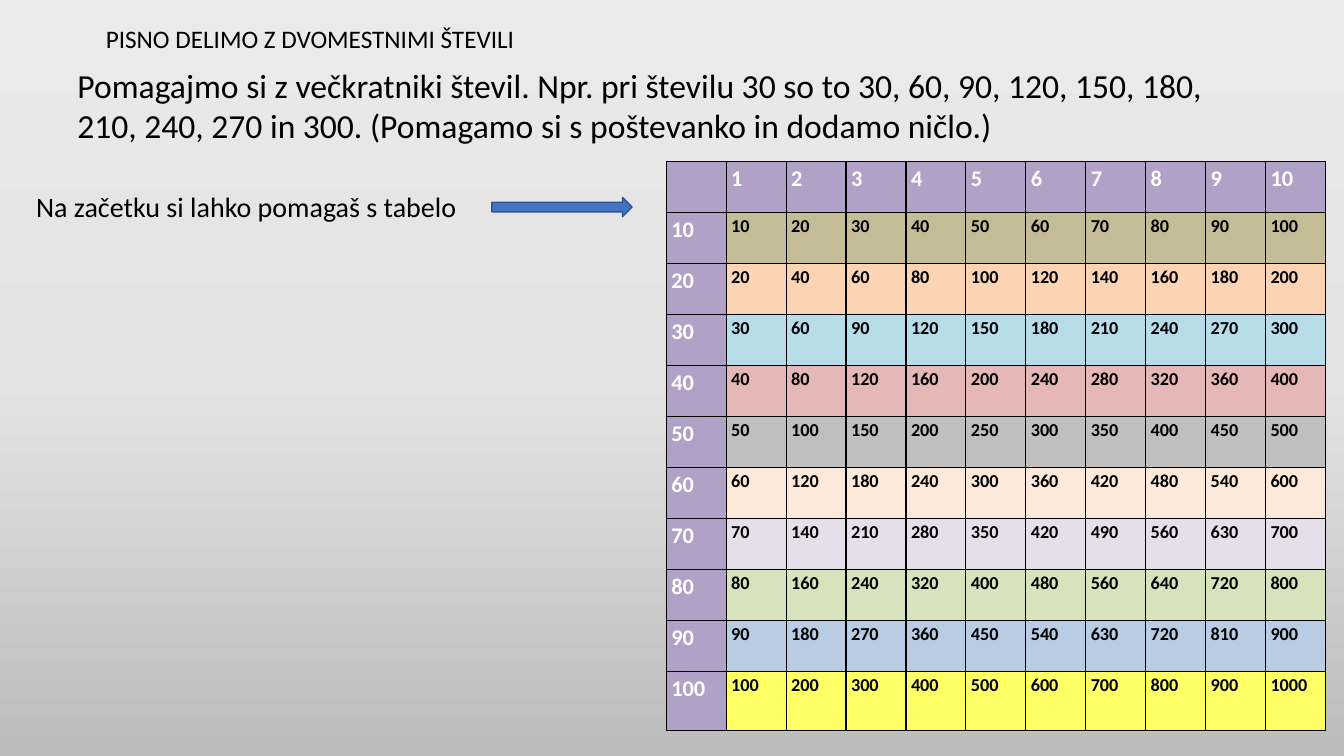
from typing import NamedTuple

from lxml import etree
from pptx import Presentation
from pptx.dml.color import RGBColor
from pptx.enum.shapes import MSO_SHAPE
from pptx.enum.text import MSO_ANCHOR, MSO_AUTO_SIZE, PP_ALIGN
from pptx.oxml import parse_xml
from pptx.oxml.ns import nsdecls, qn
from pptx.util import Inches, Pt

RIGHT_ARROW = MSO_SHAPE.RIGHT_ARROW
TOP = MSO_ANCHOR.TOP
LEFT = PP_ALIGN.LEFT
NO_AUTOFIT = MSO_AUTO_SIZE.NONE

FONT = "Calibri"
BLACK = RGBColor(0x00, 0x00, 0x00)
WHITE = RGBColor(0xFF, 0xFF, 0xFF)
HEADER_FILL = RGBColor(0xB2, 0xA1, 0xC7)
ARROW_FILL = RGBColor(0x44, 0x72, 0xC4)
ARROW_LINE = RGBColor(0x32, 0x54, 0x91)
BACKGROUND_STOPS = {
    0: RGBColor(0xEB, 0xEA, 0xEA),
    50: RGBColor(0xE4, 0xE3, 0xE3),
    100: RGBColor(0xBD, 0xBC, 0xBC),
}
MULTIPLE_FILLS = [
    RGBColor(0xC4, 0xBC, 0x96),
    RGBColor(0xFB, 0xD4, 0xB4),
    RGBColor(0xB6, 0xDD, 0xE8),
    RGBColor(0xE5, 0xB8, 0xB7),
    RGBColor(0xBF, 0xBF, 0xBF),
    RGBColor(0xFD, 0xE9, 0xD9),
    RGBColor(0xE5, 0xDF, 0xEC),
    RGBColor(0xD6, 0xE3, 0xBC),
    RGBColor(0xB8, 0xCC, 0xE4),
    RGBColor(0xFF, 0xFF, 0x66),
]

# The slide is a grid of 160 columns and 90 rows of square units.
UNIT = Inches(1 / 12)
SLIDE_COLUMNS, SLIDE_ROWS = 160, 90


class Box(NamedTuple):
    """A place on the slide, in grid units."""
    column: float
    row: float
    columns: float
    rows: float

    def emu(self):
        return [round(length * UNIT) for length in self]


TITLE_BOX = Box(11.4, 2.16, 77.9, 4.8)
EXPLANATION_BOX = Box(8.04, 7.1, 139.3, 10.9)
HINT_BOX = Box(3.12, 21.96, 53.3, 5.3)
ARROW_BOX = Box(58.56, 23.5, 16.7, 2.3)
TABLE_BOX = Box(79.32, 19.2, 78.5, 67.8)
LAST_ROW_SHARE = 0.104

TITLE = "PISNO DELIMO Z DVOMESTNIMI ŠTEVILI"
EXPLANATION = (
    "Pomagajmo si z večkratniki števil. Npr. pri številu 30 so to 30, 60, 90, "
    "120, 150, 180, 210, 240, 270 in 300. (Pomagamo si s poštevanko in dodamo ničlo.)"
)
HINT = "Na začetku si lahko pomagaš s tabelo"


def style_runs(paragraph, size, color, bold=False):
    for run in paragraph.runs:
        run.font.name = FONT
        run.font.size = Pt(size)
        run.font.bold = bold
        run.font.color.rgb = color


def paint_background(slide):
    stops = "".join(
        f'<a:gs pos="{percent * 1000}"><a:srgbClr val="{color}"/></a:gs>'
        for percent, color in BACKGROUND_STOPS.items()
    )
    background = parse_xml(
        f'<p:bg {nsdecls("p", "a")}><p:bgPr><a:gradFill rotWithShape="1">'
        f'<a:gsLst>{stops}</a:gsLst><a:lin ang="5400000" scaled="0"/>'
        "</a:gradFill><a:effectLst/></p:bgPr></p:bg>"
    )
    slide.element.cSld.insert(0, background)


def fill_text(holder, text, size):
    frame = holder.text_frame
    frame.text = text
    frame.word_wrap = True
    frame.auto_size = NO_AUTOFIT
    frame.vertical_anchor = TOP
    paragraph = frame.paragraphs[0]
    paragraph.alignment = LEFT
    style_runs(paragraph, size, BLACK)


def place_title(slide, box):
    title = slide.shapes.title
    title.left, title.top, title.width, title.height = box.emu()
    fill_text(title, TITLE, 18)


def add_text(slide, box, text, size):
    fill_text(slide.shapes.add_textbox(*box.emu()), text, size)


def add_arrow(slide, box):
    arrow = slide.shapes.add_shape(RIGHT_ARROW, *box.emu())
    arrow.shadow.inherit = False
    arrow.fill.solid()
    arrow.fill.fore_color.rgb = ARROW_FILL
    arrow.line.color.rgb = ARROW_LINE
    arrow.line.width = Pt(1)


def add_borders(cell):
    properties = cell._tc.get_or_add_tcPr()
    for position, side in enumerate(("lnL", "lnR", "lnT", "lnB")):
        border = etree.Element(qn(f"a:{side}"), w=str(Pt(1)))
        line_fill = etree.SubElement(border, qn("a:solidFill"))
        etree.SubElement(line_fill, qn("a:srgbClr"), val=str(BLACK))
        properties.insert(position, border)


def fill_cell(cell, text, is_header, fill):
    cell.fill.solid()
    cell.fill.fore_color.rgb = fill
    cell.margin_left = cell.margin_right = Inches(0.05)
    cell.margin_top = cell.margin_bottom = 0
    add_borders(cell)
    cell.text = text
    paragraph = cell.text_frame.paragraphs[0]
    paragraph.line_spacing = 1.15
    style_runs(paragraph, 16 if is_header else 13,
               WHITE if is_header else BLACK, bold=True)


def add_multiples_table(slide, box):
    """Multiply the tens 10 to 100 by the factors 1 to 10."""
    size = len(MULTIPLE_FILLS) + 1
    left, top, width, height = box.emu()
    table = slide.shapes.add_table(size, size, left, top, width, height).table
    last_height = round(height * LAST_ROW_SHARE)
    for column in table.columns:
        column.width = width // size
    for row in table.rows:
        row.height = (height - last_height) // (size - 1)
    table.rows[size - 1].height = last_height

    for tens in range(size):
        for factor in range(size):
            is_header = tens == 0 or factor == 0
            if is_header:
                value = factor or tens * 10
                fill = HEADER_FILL
            else:
                value = tens * 10 * factor
                fill = MULTIPLE_FILLS[tens - 1]
            fill_cell(table.cell(tens, factor), str(value or ""), is_header, fill)


def build_division_slide(presentation):
    slide = presentation.slides.add_slide(
        presentation.slide_layouts.get_by_name("Title Only"))
    paint_background(slide)
    add_multiples_table(slide, TABLE_BOX)
    place_title(slide, TITLE_BOX)
    add_text(slide, HINT_BOX, HINT, 20)
    add_arrow(slide, ARROW_BOX)
    add_text(slide, EXPLANATION_BOX, EXPLANATION, 24)


def main():
    presentation = Presentation()
    presentation.slide_width = SLIDE_COLUMNS * UNIT
    presentation.slide_height = SLIDE_ROWS * UNIT
    build_division_slide(presentation)
    presentation.save("out.pptx")


if __name__ == "__main__":
    main()
